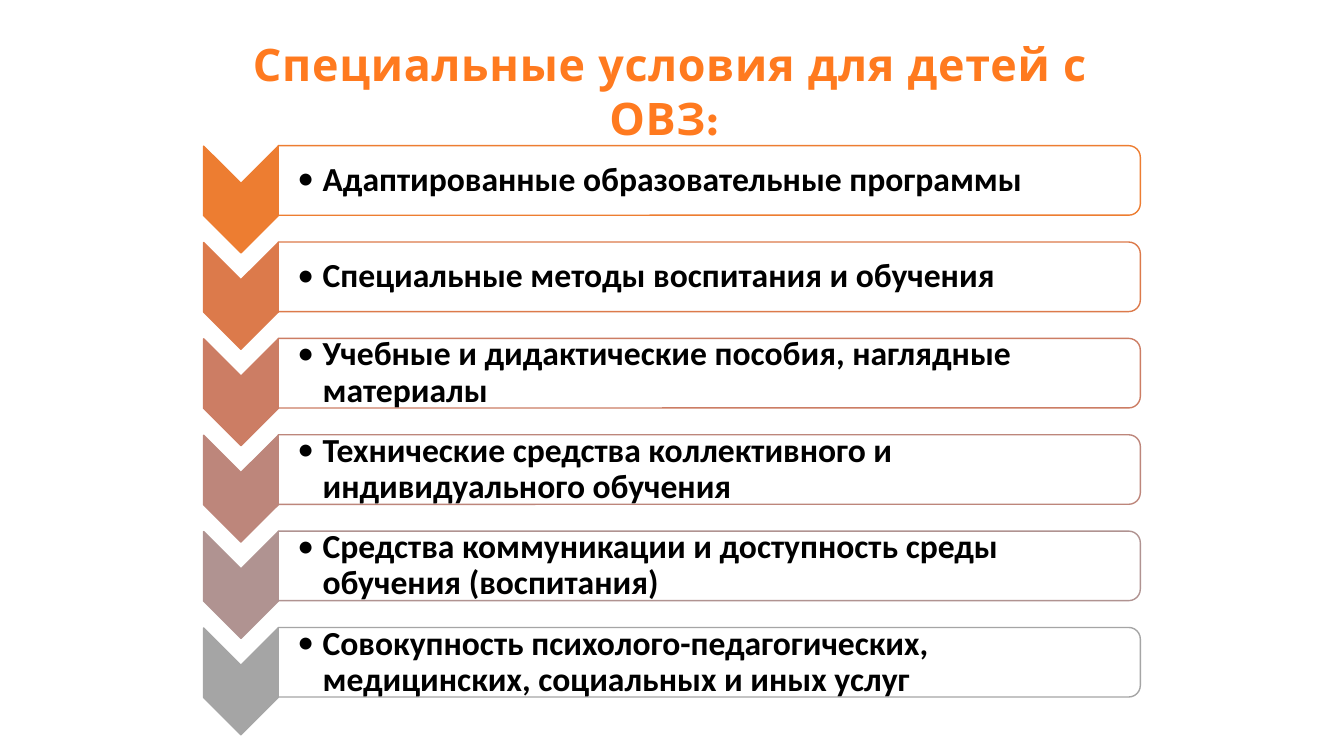
from dataclasses import dataclass
from lxml import etree
from pptx import Presentation
from pptx.dml.color import RGBColor
from pptx.enum.shapes import MSO_SHAPE
from pptx.enum.text import MSO_ANCHOR, PP_ALIGN
from pptx.oxml.ns import qn
from pptx.util import Inches, Pt

CHEVRON, BAR = MSO_SHAPE.CHEVRON, MSO_SHAPE.ROUND_2_SAME_RECTANGLE
TOP, MIDDLE = MSO_ANCHOR.TOP, MSO_ANCHOR.MIDDLE
LEFT, CENTER = PP_ALIGN.LEFT, PP_ALIGN.CENTER

TITLE = "Специальные условия для детей с ОВЗ: "
STEPS = [
    ("Адаптированные образовательные программы", "ED7D31"),
    ("Специальные методы воспитания и обучения", "DC7A4B"),
    ("Учебные и дидактические пособия, наглядные материалы", "CC7D64"),
    ("Технические средства коллективного и индивидуального обучения", "BD867B"),
    ("Средства коммуникации и доступность среды обучения (воспитания)", "B09391"),
    ("Совокупность психолого-педагогических, медицинских, социальных и иных услуг", "A5A5A5"),
]


@dataclass(frozen=True)
class Theme:
    head: str = "FF7A1F"
    ink: str = "000000"
    paper: str = "FFFFFF"
    opaque: int = 90
    head_font: str = "League Spartan"
    body_font: str = "Calibri"
    head_size: int = 32
    body_size: int = 24
    line: int = 1


THEME = Theme()
WIDE, HIGH = 13.33, 7.5
HEAD_BOX = (1.83, 0.32, 9.64, 0.64)
FIRST, LAST = 1.98, 6.76
PITCH = (LAST - FIRST) / (len(STEPS) - 1)
MARK_X, MARK_LONG, MARK_WIDE = 2.39, 1.06, 0.74
BAR_X, BAR_LONG, BAR_WIDE = MARK_X + MARK_WIDE / 2, 8.55, 0.69
BAR_RISE = 0.19
TEXT_WIDE, TEXT_HIGH = 8.51, 0.62
INSET = (0.19, 0.02, 0.02, 0.02)
HANG = 0.25


def add_text(slide, text, box, *, font, size, color, align=LEFT,
             anchor=TOP, inset=(0.1, 0.05, 0.1, 0.05), track=0, bullet=False):
    frame = slide.shapes.add_textbox(*map(Inches, box)).text_frame
    frame.word_wrap = True
    frame.vertical_anchor = anchor
    (frame.margin_left, frame.margin_top,
     frame.margin_right, frame.margin_bottom) = map(Inches, inset)
    para = frame.paragraphs[0]
    para.alignment = align
    run = para.add_run()
    run.text = text
    run.font.name, run.font.size, run.font.bold = font, Pt(size), True
    run.font.color.rgb = RGBColor.from_string(color)
    if track:
        run.font._element.set("spc", str(int(track * 100)))
    if bullet:
        para.level = 1
        para.line_spacing = 0.9
        props = para._p.get_or_add_pPr()
        props.set("marL", str(Inches(HANG)))
        props.set("indent", str(-Inches(HANG)))
        after = etree.SubElement(props, qn("a:spcAft"))
        etree.SubElement(after, qn("a:spcPct")).set("val", "15000")
        etree.SubElement(props, qn("a:buFont")).set("typeface", font)
        etree.SubElement(props, qn("a:buChar")).set("char", "•")


def add_turned(slide, kind, mid_x, mid_y, wide, high, fill, line, opaque=100):
    box = (mid_x - wide / 2, mid_y - high / 2, wide, high)
    shape = slide.shapes.add_shape(kind, *map(Inches, box))
    shape.rotation = 90
    shape.shadow.inherit = False
    shape.fill.solid()
    shape.fill.fore_color.rgb = RGBColor.from_string(fill)
    shape.line.color.rgb = RGBColor.from_string(line)
    shape.line.width = Pt(THEME.line)
    if opaque < 100:
        tint = shape._element.spPr.find(qn("a:solidFill"))[0]
        etree.SubElement(tint, qn("a:alpha")).set("val", str(opaque * 1000))


def add_step(slide, row, text, color):
    mid = FIRST + row * PITCH
    bar = mid - BAR_RISE
    add_turned(slide, CHEVRON, MARK_X, mid, MARK_LONG, MARK_WIDE, color, color)
    add_turned(slide, BAR, BAR_X + BAR_LONG / 2, bar, BAR_WIDE, BAR_LONG,
               THEME.paper, color, THEME.opaque)
    add_text(slide, text, (BAR_X, bar - TEXT_HIGH / 2, TEXT_WIDE, TEXT_HIGH),
             font=THEME.body_font, size=THEME.body_size, color=THEME.ink,
             anchor=MIDDLE, inset=INSET, bullet=True)


def main():
    deck = Presentation()
    deck.slide_width, deck.slide_height = Inches(WIDE), Inches(HIGH)
    slide = deck.slides.add_slide(deck.slide_layouts[6])
    add_text(slide, TITLE, HEAD_BOX, font=THEME.head_font, size=THEME.head_size,
             color=THEME.head, align=CENTER, track=0.5)
    for row, (text, color) in enumerate(STEPS):
        add_step(slide, row, text, color)
    deck.save("out.pptx")


if __name__ == "__main__":
    main()
